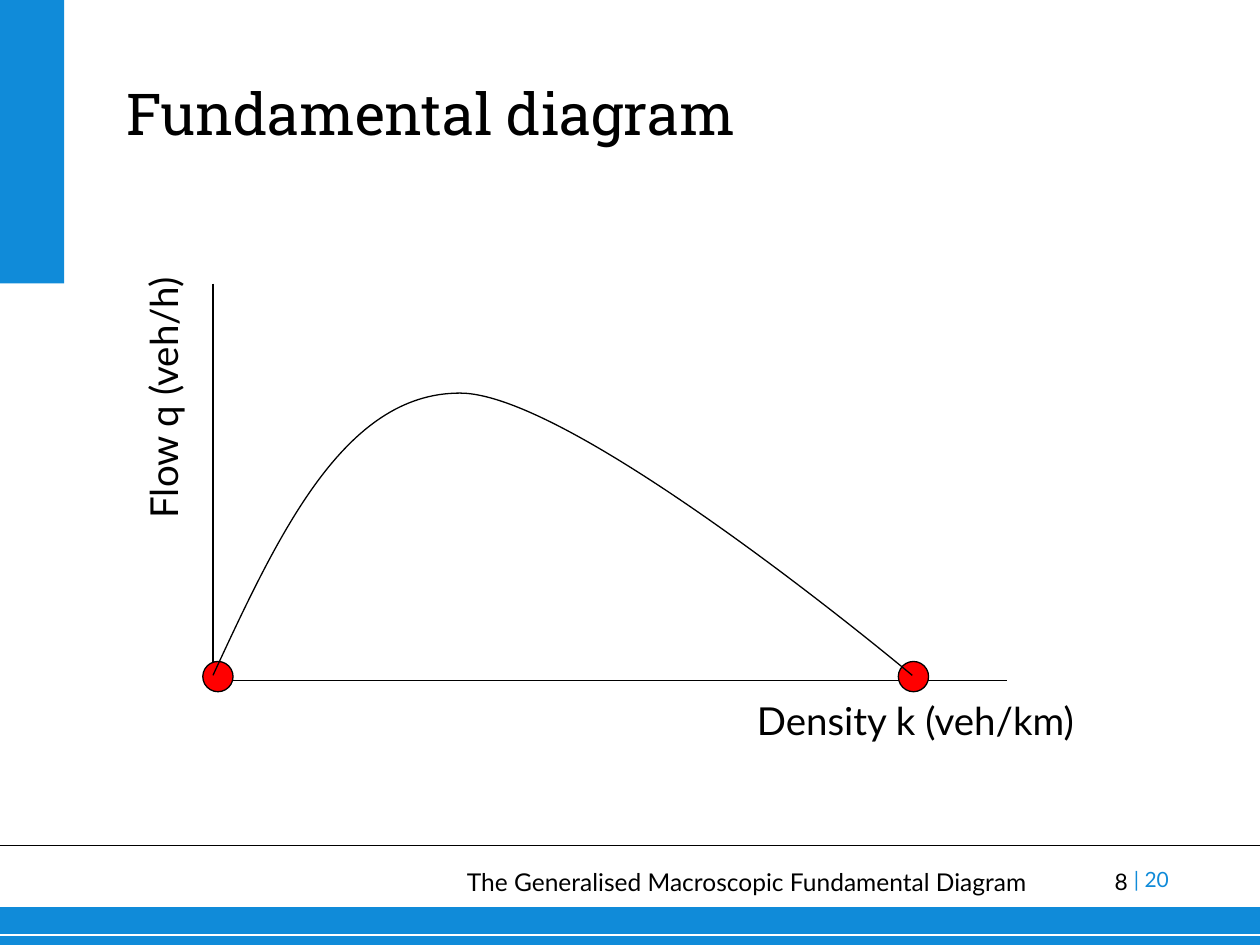
from lxml.etree import SubElement
from pptx import Presentation
from pptx.dml.color import RGBColor
from pptx.enum.shapes import MSO_CONNECTOR as CONNECTOR, MSO_SHAPE as SHAPE
from pptx.enum.text import MSO_ANCHOR as ANCHOR, PP_ALIGN as ALIGN
from pptx.oxml.ns import qn
from pptx.util import Inches, Pt

BLUE = RGBColor(0x10, 0x8B, 0xD9)
RED = RGBColor(0xFF, 0x00, 0x00)
BLACK = RGBColor(0x00, 0x00, 0x00)
WHITE = RGBColor(0xFF, 0xFF, 0xFF)

BODY_FONT = "Lato"
TITLE_FONT = "Roboto Slab"

ORIGIN_X, ORIGIN_Y = 1.69, 5.4
DOT_SIZE = 0.24


def add_text(slide, box, text, size, color=BLACK, font=BODY_FONT,
             align=ALIGN.LEFT, anchor=ANCHOR.TOP, inset=True, rotation=0):
    label = slide.shapes.add_textbox(*map(Inches, box))
    label.rotation = rotation
    frame = label.text_frame
    frame.word_wrap = True
    frame.vertical_anchor = anchor
    if not inset:
        frame.margin_left = frame.margin_right = 0
        frame.margin_top = frame.margin_bottom = 0
    paragraph = frame.paragraphs[0]
    paragraph.text = text
    paragraph.alignment = align
    paragraph.font.name = font
    paragraph.font.size = Pt(size)
    paragraph.font.color.rgb = color


def add_filled(slide, kind, box, fill, outline=None):
    shape = slide.shapes.add_shape(kind, *map(Inches, box))
    shape.shadow.inherit = False
    shape.fill.solid()
    shape.fill.fore_color.rgb = fill
    if outline is None:
        shape.line.fill.background()
    else:
        shape.line.color.rgb = outline
        shape.line.width = Pt(0.75)


def add_line(slide, start, end, color=BLACK, width=0.75):
    line = slide.shapes.add_connector(
        CONNECTOR.STRAIGHT, *map(Inches, (*start, *end)))
    line.line.color.rgb = color
    line.line.width = Pt(width)
    SubElement(line._element.spPr, qn("a:effectLst"))


def add_curve(slide, start, points):
    """Draw cubic Béziers; every three points are two controls and an end."""
    builder = slide.shapes.build_freeform(*map(Inches, start))
    builder.add_line_segments(
        [(Inches(x), Inches(y)) for x, y in points], close=False)
    curve = builder.convert_to_shape()
    curve.shadow.inherit = False
    curve.fill.background()
    curve.line.color.rgb = BLACK
    curve.line.width = Pt(0.75)

    # Turn each three straight segments into one cubic segment
    outline = next(curve._element.iter(qn("a:path")))
    segments = outline.findall(qn("a:lnTo"))
    for first in range(0, len(segments), 3):
        cubic = SubElement(outline, qn("a:cubicBezTo"))
        for segment in segments[first:first + 3]:
            cubic.append(segment[0])
            outline.remove(segment)


def add_footer(slide):
    add_text(slide, (8.36, 6.89, 0.59, 0.28), "8", 13,
             align=ALIGN.RIGHT, inset=False)
    add_filled(slide, SHAPE.RECTANGLE, (0, 7.2, 10, 0.3), BLUE)
    add_line(slide, (0, 7.42), (10, 7.42), WHITE)
    add_line(slide, (0, 6.71), (10, 6.71), width=1)
    add_text(slide, (3.42, 6.83, 4.83, 0.34),
             "The Generalised Macroscopic Fundamental Diagram", 14,
             align=ALIGN.RIGHT)
    add_text(slide, (9, 6.88, 1, 0.2), "| 20", 12, BLUE, inset=False)


def add_diagram(slide):
    # Axes and their labels
    add_line(slide, (7.99, ORIGIN_Y), (ORIGIN_X, ORIGIN_Y))
    add_line(slide, (ORIGIN_X, 2.25), (ORIGIN_X, ORIGIN_Y))
    add_text(slide, (5.47, 5.48, 3.15, 0.47), "Density k (veh/km)", 22,
             align=ALIGN.RIGHT)
    add_text(slide, (-0.28, 3.44, 3.15, 0.47), "Flow q (veh/h)", 22,
             align=ALIGN.RIGHT, rotation=270)

    # Zero-flow points: empty road and jam density
    for dot_left in (1.61, 7.13):
        add_filled(slide, SHAPE.OVAL, (dot_left, 5.25, DOT_SIZE, DOT_SIZE),
                   RED, BLACK)

    # Flow against density
    jam, peak = (7.24, 5.36), (3.65, 3.12)
    add_curve(slide, (ORIGIN_X, 5.36),
              [(2.21, 4.24), (2.73, 3.12), peak, (4.57, 3.12), jam, jam])


def main():
    prs = Presentation()
    prs.slide_width, prs.slide_height = Inches(10), Inches(7.5)
    slide = prs.slides.add_slide(prs.slide_layouts[6])

    add_footer(slide)
    # Side band and title
    add_filled(slide, SHAPE.RECTANGLE, (0, 0, 0.51, 2.25), BLUE)
    add_text(slide, (1, 0, 8.38, 1.17), "Fundamental diagram", 33,
             font=TITLE_FONT, anchor=ANCHOR.BOTTOM, inset=False)
    add_diagram(slide)

    prs.save("out.pptx")


if __name__ == "__main__":
    main()
